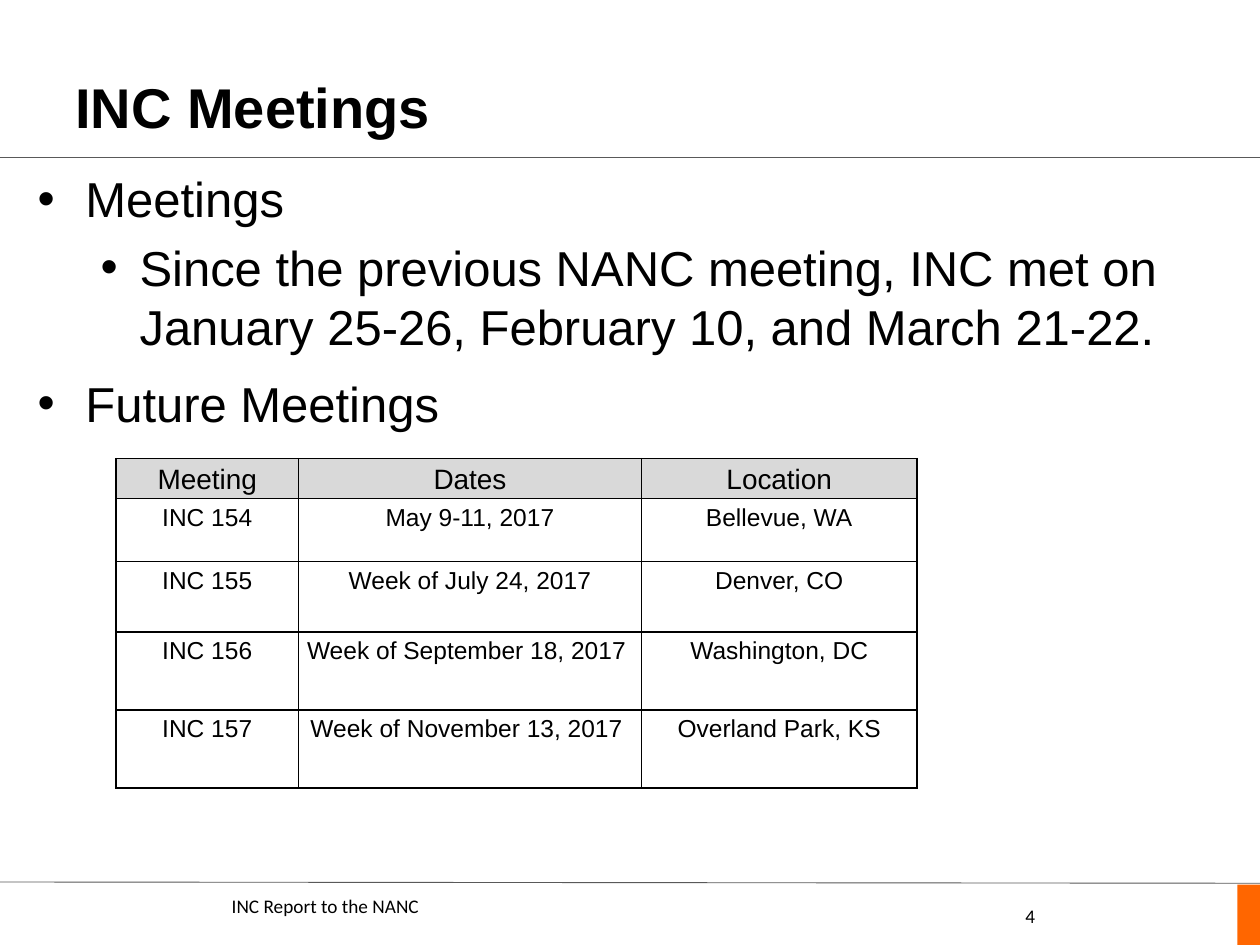
import pptx
import pptx.dml.color
import pptx.enum.shapes
import pptx.enum.text
import pptx.oxml.ns
import pptx.util
from lxml import etree

Inches = pptx.util.Inches
Pt = pptx.util.Pt
ALIGN = pptx.enum.text.PP_ALIGN
ANCHOR = pptx.enum.text.MSO_ANCHOR


def color(value):
    return pptx.dml.color.RGBColor.from_string(value)


def add_element(parent, tag, **attributes):
    return etree.SubElement(parent, pptx.oxml.ns.qn(tag), attributes)


class MeetingSlide:
    """Hold the style and the current slide, and add each kind of element."""

    ink, rule, accent, header = "000000", "595959", "FF6600", "D9D9D9"
    body_font, footer_font = "Arial", "Calibri"

    def __init__(self, presentation):
        self.slide = presentation.slides.add_slide(presentation.slide_layouts[6])
        self.shapes = self.slide.shapes

    def format_runs(self, paragraph, size, font=body_font, bold=False):
        for run in paragraph.runs:
            run.font.name = font
            run.font.size = Pt(size)
            run.font.bold = bold
            run.font.color.rgb = color(self.ink)

    def block(self, left, top, width, height):
        shape = self.shapes.add_shape(
            pptx.enum.shapes.MSO_SHAPE.RECTANGLE,
            Inches(left), Inches(top), Inches(width), Inches(height))
        shape.shadow.inherit = False
        shape.fill.solid()
        shape.fill.fore_color.rgb = color(self.accent)
        shape.line.fill.background()

    def line(self, left, top, right, bottom):
        connector = self.shapes.add_connector(
            pptx.enum.shapes.MSO_CONNECTOR.STRAIGHT,
            Inches(left), Inches(top), Inches(right), Inches(bottom))
        connector.line.color.rgb = color(self.rule)
        connector.line.width = Pt(0.5)
        add_element(connector._element.spPr, "a:effectLst")

    def text_box(self, left, top, width, height):
        shape = self.shapes.add_textbox(
            Inches(left), Inches(top), Inches(width), Inches(height))
        shape.text_frame.word_wrap = True
        return shape.text_frame

    def text(self, text, box, size, font=body_font, bold=False, anchor=ANCHOR.TOP):
        text_frame = self.text_box(*box)
        text_frame.text = text
        text_frame.vertical_anchor = anchor
        self.format_runs(text_frame.paragraphs[0], size, font, bold)

    def bullets(self, items, box, size):
        text_frame = self.text_box(*box)
        text_frame.margin_top = text_frame.margin_bottom = 0
        text_frame.text = "\n".join(text for text, level in items)
        for index, (paragraph, (text, level)) in enumerate(zip(text_frame.paragraphs, items)):
            indent, hanging, space = ((0.38, 0.38, 10.3), (0.81, 0.31, 5.6))[level]
            paragraph.level = level
            if index:
                paragraph.space_before = Pt(space)
            properties = paragraph._p.get_or_add_pPr()
            properties.set("marL", str(Inches(indent)))
            properties.set("indent", str(-Inches(hanging)))
            add_element(properties, "a:buFont", typeface=self.body_font)
            add_element(properties, "a:buChar", char="•")
            self.format_runs(paragraph, size)

    def borders(self, cell):
        properties = cell._tc.get_or_add_tcPr()
        for side in ("a:lnL", "a:lnR", "a:lnT", "a:lnB"):
            border = add_element(properties, side, w=str(Pt(1)))
            add_element(add_element(border, "a:solidFill"), "a:srgbClr", val=self.ink)

    def table(self, rows, left, top, widths, heights):
        table = self.shapes.add_table(
            len(rows), len(widths), Inches(left), Inches(top),
            Inches(sum(widths)), Inches(sum(heights))).table
        table.first_row = table.horz_banding = False
        for column, width in zip(table.columns, widths):
            column.width = Inches(width)
        for row_index, (row, height) in enumerate(zip(rows, heights)):
            table.rows[row_index].height = Inches(height)
            for column_index, text in enumerate(row):
                self.cell(table.cell(row_index, column_index), text, row_index == 0)

    def cell(self, cell, text, is_header):
        cell.text = text
        cell.margin_left = cell.margin_right = cell.margin_top = Inches(0.01)
        cell.margin_bottom = 0
        self.borders(cell)
        if is_header:
            cell.fill.solid()
            cell.fill.fore_color.rgb = color(self.header)
        else:
            cell.fill.background()
        paragraph = cell.text_frame.paragraphs[0]
        paragraph.alignment = ALIGN.CENTER
        paragraph.line_spacing = 1.15
        paragraph.space_after = Pt(10)
        self.format_runs(paragraph, 16 if is_header else 14)


def main():
    presentation = pptx.Presentation()
    presentation.slide_width = Inches(10)
    presentation.slide_height = Inches(7.5)
    page = MeetingSlide(presentation)

    page.block(9.82, 7.02, 0.18, 0.48)
    page.line(10, 7.01, 0, 7)
    page.line(0, 1.25, 10, 1.25)
    page.text("INC Report to the NANC", (1.74, 7.05, 1.91, 0.4), 11, page.footer_font)
    page.text("4", (8.04, 7.13, 0.6, 0.29), 11, page.footer_font)
    page.text("INC Meetings", (0.5, 0.14, 9, 1.02), 32, bold=True, anchor=ANCHOR.BOTTOM)
    page.bullets([
        ("Meetings", 0),
        ("Since the previous NANC meeting, INC met on "
         "January 25-26, February 10, and March 21-22.", 1),
        ("Future Meetings", 0),
    ], (0.2, 1.34, 9.63, 5.34), 28)
    page.table([
        ("Meeting", "Dates", "Location"),
        ("INC 154", "May 9-11, 2017", "Bellevue, WA"),
        ("INC 155", "Week of July 24, 2017", "Denver, CO"),
        ("INC 156", "Week of September 18, 2017 ", "Washington, DC"),
        ("INC 157", "Week of November 13, 2017 ", "Overland Park, KS"),
    ], 0.92, 3.64, (1.45, 2.72, 2.19), (0.29, 0.5, 0.56, 0.62, 0.62))

    presentation.save("out.pptx")


if __name__ == "__main__":
    main()
